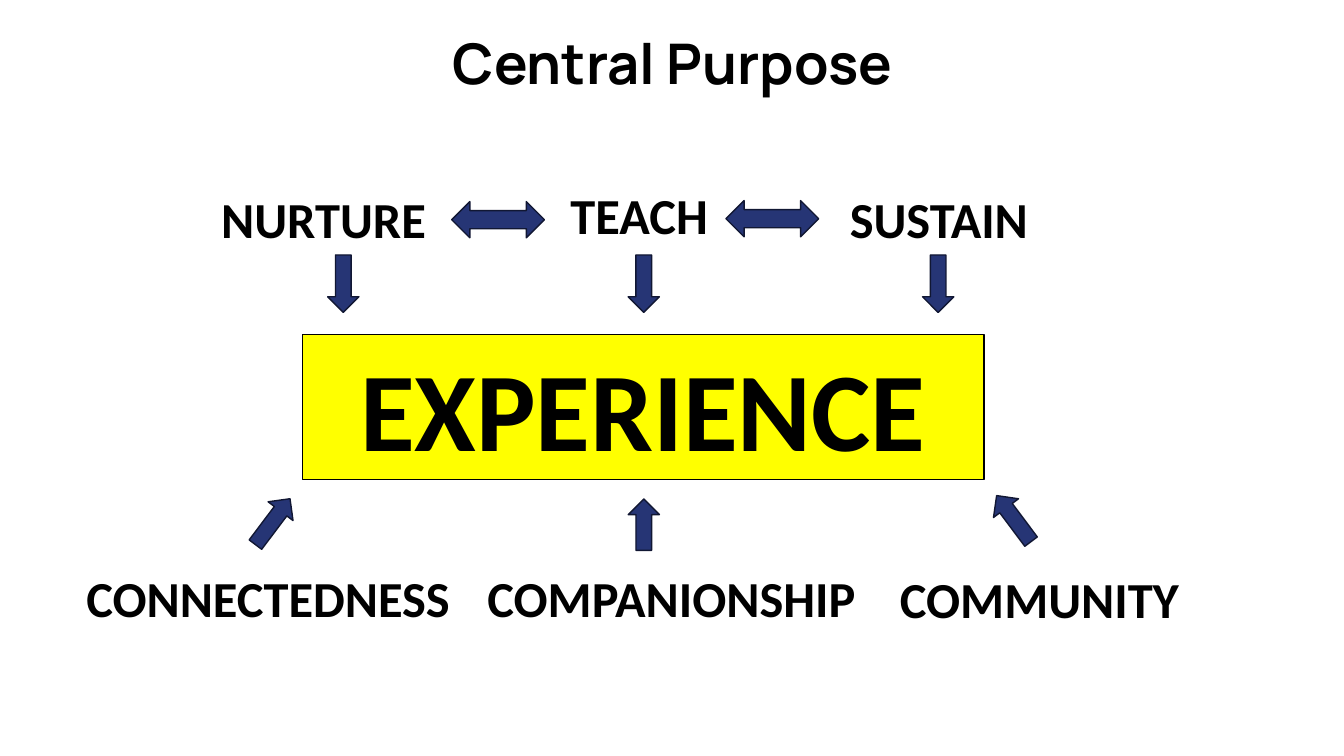
import pptx
import pptx.dml.color
import pptx.enum.shapes
import pptx.enum.text
import pptx.util

PX = 9144
COLOURS = {"ink": "000000", "box": "FFFF00", "arrow": "263575", "edge": "111733"}
SHAPES = pptx.enum.shapes.MSO_SHAPE
ALIGN = pptx.enum.text.PP_ALIGN
ANCHOR = pptx.enum.text.MSO_ANCHOR


def colour(name):
    """Return a named colour of the slide."""
    return pptx.dml.color.RGBColor.from_string(COLOURS[name])


def emu(*lengths):
    """Turn px lengths into EMU."""
    return [pptx.util.Emu(length * PX) for length in lengths]


def write(box, text, size, font="Calibri", align=ALIGN.CENTER, anchor=ANCHOR.TOP):
    """Write one bold line into a box and return its paragraph."""
    frame = box.text_frame
    frame.word_wrap = True
    frame.vertical_anchor = anchor
    para = frame.paragraphs[0]
    para.alignment = align
    span = para.add_run()
    span.text = text
    span.font.name = font
    span.font.size = pptx.util.Pt(size)
    span.font.bold = True
    span.font.color.rgb = colour("ink")
    return para


def add_title(page, text):
    """Add the slide heading."""
    box = page.shapes.add_textbox(*emu(39, 28, 1256, 76))
    para = write(box, text, 40, "Manrope", anchor=ANCHOR.MIDDLE)
    para.line_spacing = 0.9


def add_label(page, text, left, top, width, align=ALIGN.CENTER):
    """Add a word outside the central box."""
    box = page.shapes.add_textbox(*emu(left, top, width, 71))
    write(box, text, 36, align=align)


def add_block(page, kind, area, fill, line):
    """Add a filled and outlined preset shape."""
    block = page.shapes.add_shape(kind, *emu(*area))
    block.shadow.inherit = False
    block.fill.solid()
    block.fill.fore_color.rgb = colour(fill)
    block.line.color.rgb = colour(line)
    block.line.width = pptx.util.Pt(1)
    return block


def add_arrow(page, kind, area, turn=0):
    """Add a block arrow, turned clockwise in degrees."""
    add_block(page, kind, area, "arrow", "edge").rotation = turn


def main():
    """Build the slide and save it."""
    deck = pptx.Presentation()
    deck.slide_width, deck.slide_height = emu(1333, 750)
    page = deck.slides.add_slide(deck.slide_layouts[6])

    add_title(page, "Central Purpose")
    centre = add_block(page, SHAPES.RECTANGLE, (300, 332, 676, 144), "box", "ink")
    write(centre, "EXPERIENCE", 80)

    add_label(page, "NURTURE", 208, 182, 226)
    add_label(page, "TEACH", 521, 178, 226)
    add_label(page, "SUSTAIN", 833, 182, 225, ALIGN.LEFT)
    add_label(page, "CONNECTEDNESS", 74, 558, 384)
    add_label(page, "COMPANIONSHIP", 457, 558, 418)
    add_label(page, "COMMUNITY", 847, 559, 368)

    for left, top in ((448, 200), (720, 199)):
        add_arrow(page, SHAPES.LEFT_RIGHT_ARROW, (left, top, 92, 36))
    for left in (325, 623, 915):
        add_arrow(page, SHAPES.DOWN_ARROW, (left, 253, 31, 57))
    for left, top, height, turn in (
        (255, 489, 57, 217),
        (623, 495, 51, 180),
        (990, 486, 57, 143.2),
    ):
        add_arrow(page, SHAPES.DOWN_ARROW, (left, top, 31, height), turn)

    deck.save("out.pptx")


if __name__ == "__main__":
    main()
